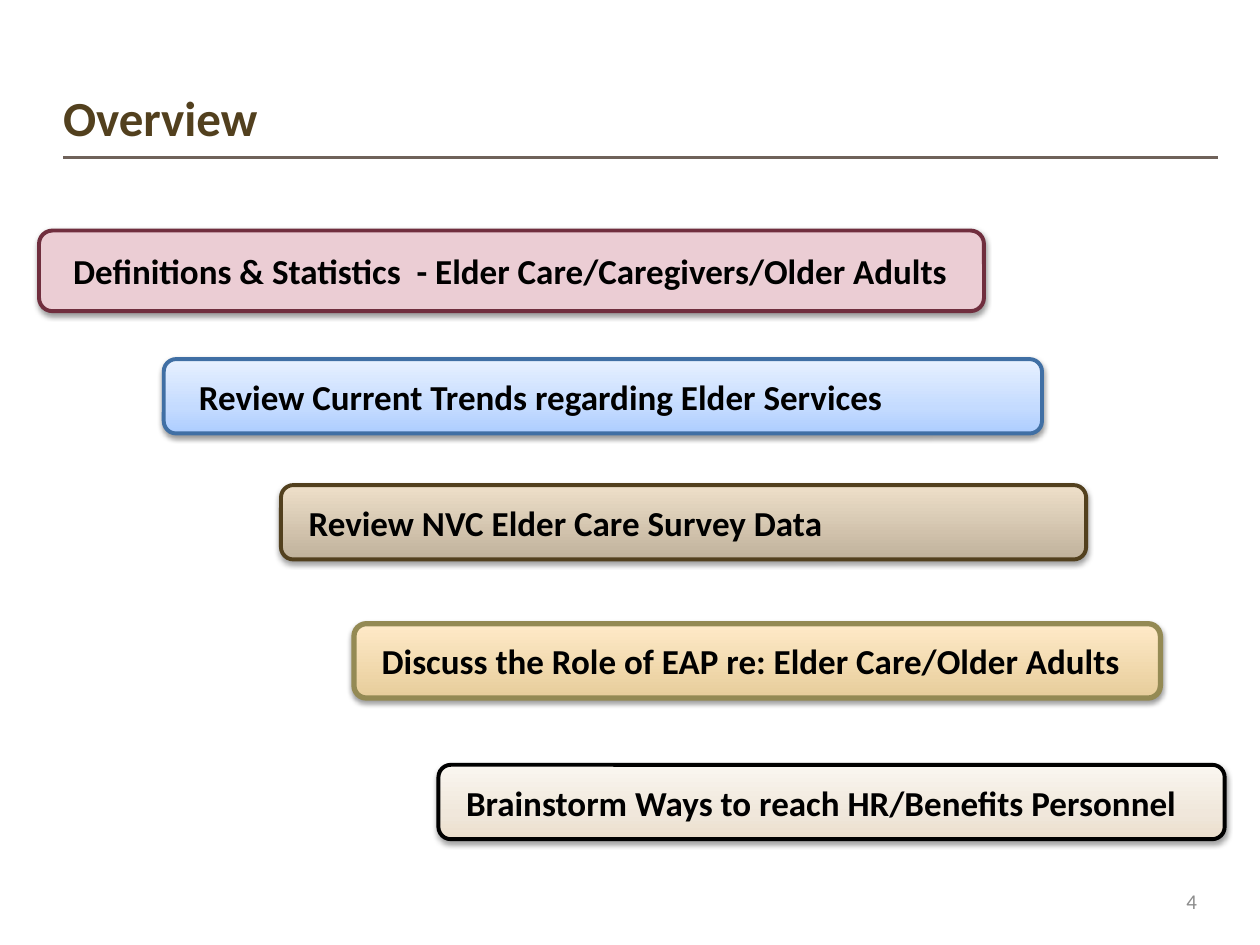
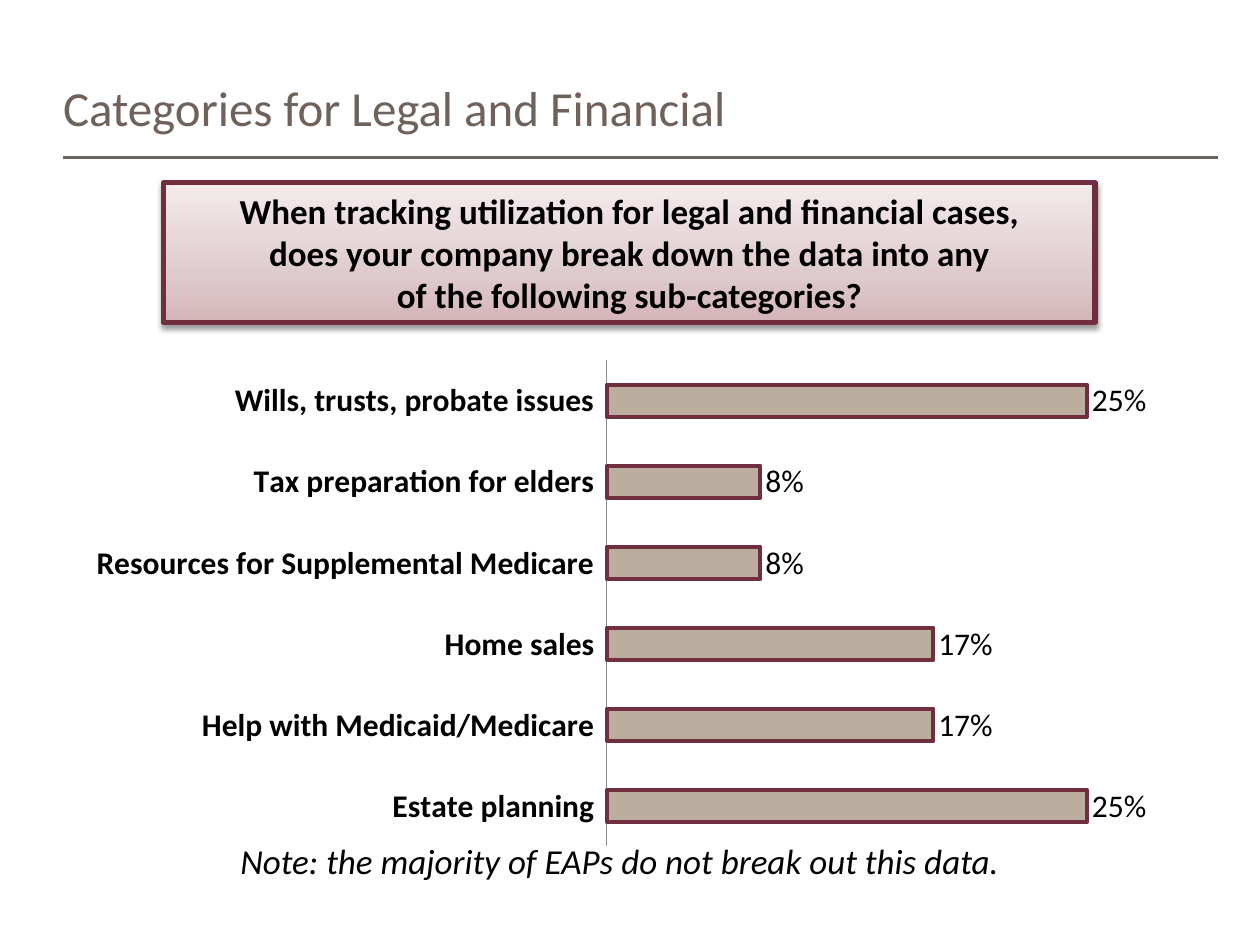
"""Builds two slides on elder care: an overview staircase and a survey chart."""
from dataclasses import dataclass

from lxml import etree
from pptx import Presentation
from pptx.chart.data import CategoryChartData
from pptx.dml.color import RGBColor
from pptx.enum.chart import XL_CHART_TYPE, XL_LABEL_POSITION, XL_TICK_LABEL_POSITION, XL_TICK_MARK
from pptx.enum.shapes import MSO_CONNECTOR, MSO_SHAPE
from pptx.enum.text import MSO_ANCHOR, MSO_AUTO_SIZE, PP_ALIGN
from pptx.oxml import parse_xml
from pptx.oxml.ns import nsdecls, qn
from pptx.util import Inches, Pt

LEFT, CENTER, RIGHT = PP_ALIGN.LEFT, PP_ALIGN.CENTER, PP_ALIGN.RIGHT
MIDDLE, BOTTOM = MSO_ANCHOR.MIDDLE, MSO_ANCHOR.BOTTOM
ROUNDED, RECTANGLE = MSO_SHAPE.ROUNDED_RECTANGLE, MSO_SHAPE.RECTANGLE
STRAIGHT = MSO_CONNECTOR.STRAIGHT
BAR = XL_CHART_TYPE.BAR_CLUSTERED
OUTSIDE_END = XL_LABEL_POSITION.OUTSIDE_END
LABELS_LOW = XL_TICK_LABEL_POSITION.LOW
NO_TICK = XL_TICK_MARK.NONE
NO_AUTOFIT = MSO_AUTO_SIZE.NONE
TITLE_ONLY = 5


@dataclass(frozen=True)
class Theme:
    """Colours, font and type sizes of the deck."""
    font: str = "Calibri"
    ink: str = "000000"
    taupe: str = "6F625A"
    brown: str = "52401E"
    wine: str = "702E3E"
    blue: str = "406FA4"
    olive: str = "948A54"
    bar: str = "BBAE9E"
    gray: str = "8C8C8C"
    title_size: int = 28
    body_size: int = 20
    chart_size: int = 18
    number_size: int = 12


THEME = Theme()

ROSE_FILL = [(0, "EBCDD4")]
BLUE_FILL = [(0, "ADCDFF"), (35, "C4DBFF"), (100, "E8F1FF")]
TAN_FILL = [(0, "C0B29C"), (100, "EEDFC9")]
GOLD_FILL = [(0, "E7CD9B"), (100, "FFEAC8")]
CREAM_FILL = [(0, "EBDECC"), (35, "F0E7DB"), (100, "FAF6F0")]
PINK_FILL = [(0, "D3B4B9"), (35, "DFCBCE"), (100, "F3EBEC")]

TOPICS = [
    ("Definitions & Statistics  - Elder Care/Caregivers/Older Adults",
     (0.31, 1.83, 7.5, 0.64), ROSE_FILL, THEME.wine, 2.25, (0.12, 0.12)),
    ("Review Current Trends regarding Elder Services",
     (1.3, 2.85, 6.97, 0.59), BLUE_FILL, THEME.blue, 2.25, (0, 0.25)),
    ("Review NVC Elder Care Survey Data",
     (2.23, 3.85, 6.39, 0.59), TAN_FILL, THEME.brown, 2.25, (0, 0.19)),
    ("Discuss the Role of EAP re: Elder Care/Older Adults",
     (2.81, 4.95, 6.4, 0.59), GOLD_FILL, THEME.olive, 3, (0, 0.19)),
    ("Brainstorm Ways to reach HR/Benefits Personnel",
     (3.48, 6.07, 6.24, 0.59), CREAM_FILL, THEME.ink, 2.25, (0, 0.19)),
]
QUESTION = [
    "When tracking utilization for legal and financial cases,",
    "does your company break down the data into any",
    "of the following sub-categories?",
]
SUBCATEGORIES = {
    "Estate planning": 0.25,
    "Help with Medicaid/Medicare": 0.17,
    "Home sales": 0.17,
    "Resources for Supplemental Medicare": 0.08,
    "Tax preparation for elders": 0.08,
    "Wills, trusts, probate issues": 0.25,
}


def inches(box):
    """Turn a tuple of inches into lengths."""
    return [Inches(value) for value in box]


def style_font(font, size, color=THEME.ink, bold=False, italic=False):
    """Apply the deck's font with the given look."""
    font.name, font.size = THEME.font, Pt(size)
    font.bold, font.italic = bold, italic
    font.color.rgb = RGBColor.from_string(color)


def write(shape, lines, size, align=LEFT, anchor=MIDDLE,
          insets=(0.1, 0.05, 0.1, 0.05), **look):
    """Fill a shape with one single-run paragraph per line."""
    frame = shape.text_frame
    frame.word_wrap, frame.auto_size = True, NO_AUTOFIT
    frame.vertical_anchor = anchor
    (frame.margin_left, frame.margin_top,
     frame.margin_right, frame.margin_bottom) = inches(insets)
    for index, line in enumerate(lines):
        para = frame.add_paragraph() if index else frame.paragraphs[0]
        para.alignment = align
        span = para.add_run()
        span.text = line
        style_font(span.font, size, **look)
    return frame


def add_text(page, box, text, size, **options):
    """Add a wrapped text box with one line of text."""
    write(page.shapes.add_textbox(*inches(box)), [text], size, **options)


def paint(fill, stops):
    """Fill with one colour, or with a gradient that rises from the bottom."""
    if len(stops) == 1:
        fill.solid()
        fill.fore_color.rgb = RGBColor.from_string(stops[0][1])
        return
    fill.gradient()
    fill.gradient_angle = 90
    stop_list = fill._fill._gradFill.find(qn("a:gsLst"))
    for old_stop in list(stop_list):
        stop_list.remove(old_stop)
    for position, color in stops:
        stop = etree.SubElement(stop_list, qn("a:gs"), pos=str(position * 1000))
        etree.SubElement(stop, qn("a:srgbClr"), val=color)


def add_panel(page, kind, box, stops, edge, weight):
    """Add an outlined panel with a soft shadow below it."""
    panel = page.shapes.add_shape(kind, *inches(box))
    paint(panel.fill, stops)
    panel.line.color.rgb = RGBColor.from_string(edge)
    panel.line.width = Pt(weight)
    panel.shadow.inherit = False
    effects = panel._element.spPr.find(qn("a:effectLst"))
    shadow = etree.SubElement(
        effects, qn("a:outerShdw"), blurRad=str(Pt(3.1)), dist=str(Pt(1.6)),
        dir="5400000", rotWithShape="0")
    tint = etree.SubElement(shadow, qn("a:srgbClr"), val=THEME.ink)
    etree.SubElement(tint, qn("a:alpha"), val="38000")
    return panel


def add_page(deck, title, top, **look):
    """Add a title-only page with its heading and the rule below it."""
    page = deck.slides.add_slide(deck.slide_layouts[TITLE_ONLY])
    heading = page.shapes.title
    heading.left, heading.top, heading.width, heading.height = inches((0.5, top, 7.31, 0.78))
    write(heading, [title], THEME.title_size, anchor=BOTTOM, insets=(0, 0.05, 0.1, 0), **look)
    rule = page.shapes.add_connector(STRAIGHT, *inches((0.5, 1.25, 9.67, 1.25)))
    rule.line.color.rgb = RGBColor.from_string(THEME.taupe)
    rule.line.width = Pt(2.25)
    etree.SubElement(rule._element.spPr, qn("a:effectLst"))
    return page


def add_topic(page, text, box, stops, edge, weight, indents):
    """Add one step of the overview staircase."""
    panel = add_panel(page, ROUNDED, box, stops, edge, weight)
    frame = write(panel, [text], THEME.body_size, insets=(0, 0.05, 0.1, 0.05), bold=True)
    margin, indent = inches(indents)
    properties = frame.paragraphs[0]._p.get_or_add_pPr()
    properties.set("marL", str(margin))
    properties.set("indent", str(indent))


def place_plot(chart, x, y, width, height):
    """Fix the inner plot area as fractions of the chart."""
    plot_area = chart._chartSpace.chart.plotArea
    for old_layout in plot_area.findall(qn("c:layout")):
        plot_area.remove(old_layout)
    plot_area.insert(0, parse_xml(
        f'<c:layout {nsdecls("c")}><c:manualLayout><c:layoutTarget val="inner"/>'
        '<c:xMode val="edge"/><c:yMode val="edge"/>'
        f'<c:x val="{x}"/><c:y val="{y}"/><c:w val="{width}"/><c:h val="{height}"/>'
        '</c:manualLayout></c:layout>'))


def add_bar_chart(page, box, values):
    """Add the bar chart of sub-categories."""
    data = CategoryChartData(number_format="0%")
    data.categories = list(values)
    data.add_series("Series 1", list(values.values()))
    chart = page.shapes.add_chart(BAR, *inches(box), data).chart
    chart.has_legend = chart.has_title = False
    style_font(chart.font, THEME.chart_size)
    place_plot(chart, 0.47, 0.02, 0.51, 0.96)

    scale = chart.value_axis
    scale.minimum_scale, scale.maximum_scale = 0, 0.3
    scale.has_major_gridlines = scale.visible = False
    names = chart.category_axis
    names.major_tick_mark = names.minor_tick_mark = NO_TICK
    names.tick_label_position = LABELS_LOW
    names.format.line.color.rgb = RGBColor.from_string(THEME.gray)
    style_font(names.tick_labels.font, THEME.chart_size, bold=True)

    plot = chart.plots[0]
    plot.gap_width, plot.overlap, plot.vary_by_categories = 150, -25, False
    bars = plot.series[0].format
    paint(bars.fill, [(0, THEME.bar)])
    bars.line.color.rgb = RGBColor.from_string(THEME.wine)
    bars.line.width = Pt(2.25)
    plot.has_data_labels = True
    labels = plot.data_labels
    labels.show_value, labels.position = True, OUTSIDE_END
    labels.number_format, labels.number_format_is_linked = "0%", False
    style_font(labels.font, THEME.chart_size)


def build_overview(deck):
    """Build the overview page."""
    page = add_page(deck, "Overview", 0.38, color=THEME.brown, bold=True)
    for topic in TOPICS:
        add_topic(page, *topic)
    add_text(page, (7.17, 6.95, 2.33, 0.4), "4", THEME.number_size, align=RIGHT,
             insets=(0.1, 0.05, 0, 0.05), color=THEME.gray)


def build_survey(deck):
    """Build the page on legal and financial categories."""
    page = add_page(deck, "Categories for Legal and Financial", 0.3, color=THEME.taupe)
    question = add_panel(page, RECTANGLE, (1.3, 1.45, 7.39, 1.11), PINK_FILL, THEME.wine, 3)
    write(question, QUESTION, THEME.body_size, align=CENTER, bold=True)
    add_text(page, (0.6, 6.61, 8.64, 0.44),
             "Note: the majority of EAPs do not break out this data.",
             THEME.body_size, align=CENTER, italic=True)
    add_bar_chart(page, (0.6, 2.78, 8.97, 4.02), SUBCATEGORIES)


def main():
    """Build and save the deck."""
    deck = Presentation()
    deck.slide_width, deck.slide_height = inches((10, 7.5))
    build_overview(deck)
    build_survey(deck)
    deck.save("out.pptx")


if __name__ == "__main__":
    main()
